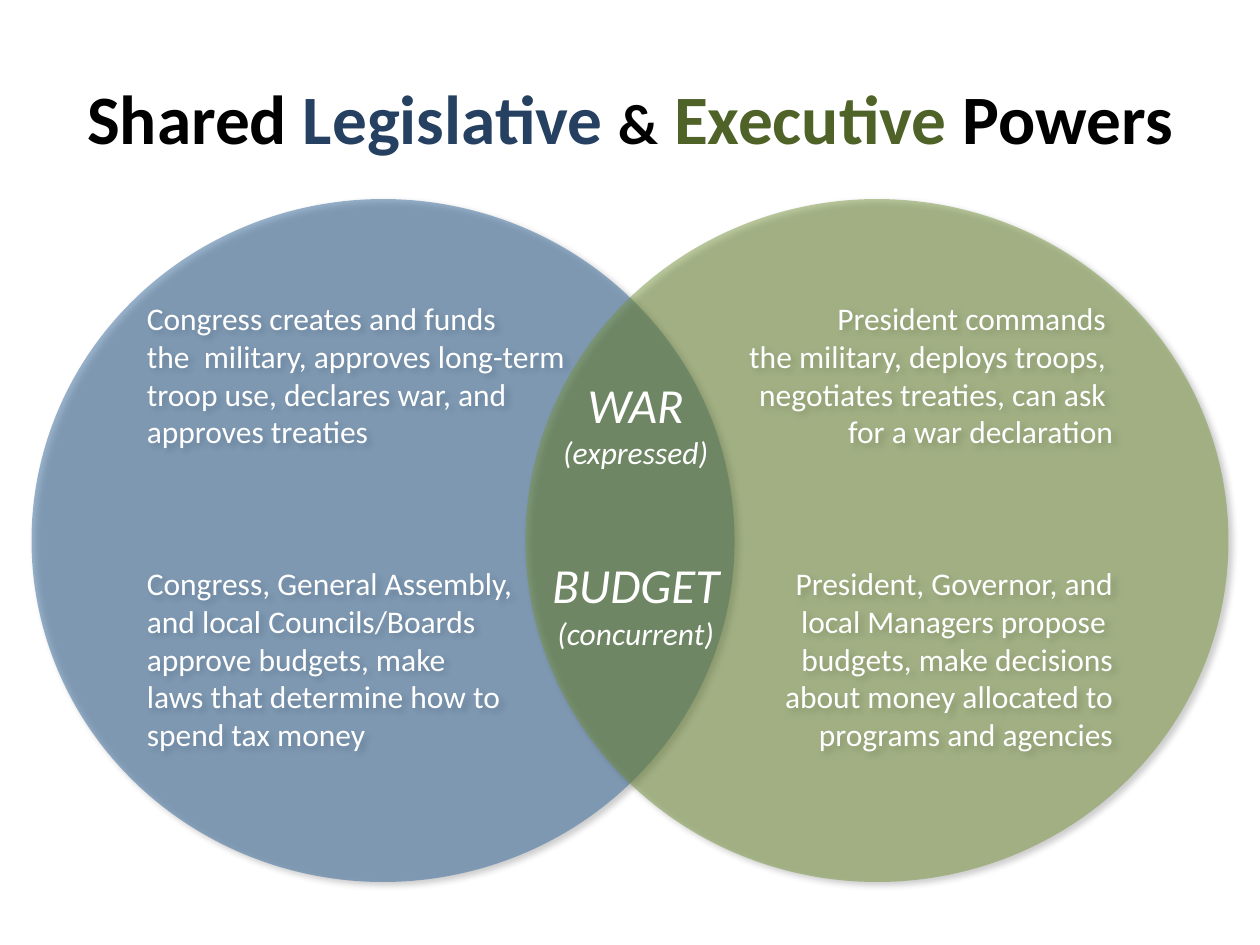
import pptx
import pptx.dml.color
import pptx.enum.shapes
import pptx.enum.text
import pptx.oxml
import pptx.oxml.ns
import pptx.util

Inches, Pt = pptx.util.Inches, pptx.util.Pt
RGBColor = pptx.dml.color.RGBColor
PP_ALIGN = pptx.enum.text.PP_ALIGN
ANCHOR = pptx.enum.text.MSO_ANCHOR
qn = pptx.oxml.ns.qn

BLACK = RGBColor(0x00, 0x00, 0x00)
WHITE = RGBColor(0xFF, 0xFF, 0xFF)
NAVY = RGBColor(0x25, 0x40, 0x61)
OLIVE = RGBColor(0x4F, 0x62, 0x28)
BLUE = RGBColor(0x33, 0x66, 0x99)
GREEN = RGBColor(0x77, 0x93, 0x3C)
FONT = "Calibri"

# Content
TITLE = [
    ("Shared ", 39.6, BLACK),
    ("Legislative ", 39.6, NAVY),
    ("&", 32.4, BLACK),
    (" ", 39.6, BLACK),
    ("Executive", 39.6, OLIVE),
    (" Powers", 39.6, BLACK),
]
LEGISLATIVE = [
    "Congress creates and funds \nthe  military, approves long-term "
    "troop use, declares war, and\napproves treaties",
    "Congress, General Assembly, \nand local Councils/Boards \n"
    "approve budgets, make\nlaws that determine how to\nspend tax money",
]
EXECUTIVE = [
    "President commands \nthe military, deploys troops, \n"
    "negotiates treaties, can ask \nfor a war declaration",
    "President, Governor, and\nlocal Managers propose \n"
    "budgets, make decisions\nabout money allocated to\nprograms and agencies",
]
SHARED = [("WAR", "(expressed)"), ("BUDGET", "(concurrent)")]

# Layout: two mirrored circles with equal side margins
SLIDE_W, SLIDE_H = 10, 7.5
MARGIN = 0.25
CIRCLE_W, CIRCLE_H, CIRCLE_TOP = 5.58, 5.42, 1.58
RIGHT_LEFT = SLIDE_W - MARGIN - CIRCLE_W
CIRCLES = [
    (MARGIN, BLUE, PP_ALIGN.LEFT, LEGISLATIVE),
    (RIGHT_LEFT, GREEN, PP_ALIGN.RIGHT, EXECUTIVE),
]
CIRCLE_GAP, SHARED_GAP = 65, 48  # points between the two topics


def shadow_effect(blur, distance, alpha):
    return pptx.oxml.parse_xml(
        f'<a:effectLst {pptx.oxml.ns.nsdecls("a")}>'
        f'<a:outerShdw blurRad="{Pt(blur)}" dist="{Pt(distance)}" dir="2700000" '
        f'algn="tl" rotWithShape="0"><a:srgbClr val="000000">'
        f'<a:alpha val="{alpha * 1000}"/></a:srgbClr></a:outerShdw></a:effectLst>')


def format_font(font, size, color, **styles):
    font.color.rgb = color
    for name, value in {"name": FONT, "size": Pt(size), **styles}.items():
        setattr(font, name, value)


def write_paragraph(frame, index, text, size, align, gap=0, **styles):
    paragraph = frame.paragraphs[0] if index == 0 else frame.add_paragraph()
    paragraph.text = text
    paragraph.alignment = align
    paragraph.space_before = Pt(gap)
    for run in paragraph.runs:
        format_font(run.font, size, WHITE, **styles)
        fill = run._r.rPr.find(qn("a:solidFill"))
        fill.addnext(shadow_effect(4, 3, 40))


def add_title(slide):
    title = slide.shapes.title
    place = {"left": 0.5, "top": 0.3, "width": SLIDE_W - 1, "height": 1.25}
    for side, length in place.items():
        setattr(title, side, Inches(length))
    frame = title.text_frame
    frame.auto_size = pptx.enum.text.MSO_AUTO_SIZE.NONE
    frame.vertical_anchor = ANCHOR.MIDDLE
    paragraph = frame.paragraphs[0]
    paragraph.alignment = PP_ALIGN.CENTER
    for text, size, color in TITLE:
        run = paragraph.add_run()
        run.text = text
        format_font(run.font, size, color, bold=True)


def add_circle(slide, left, color, align, topics):
    circle = slide.shapes.add_shape(
        pptx.enum.shapes.MSO_SHAPE.OVAL, Inches(left), Inches(CIRCLE_TOP),
        Inches(CIRCLE_W), Inches(CIRCLE_H))
    circle.fill.solid()
    circle.fill.fore_color.rgb = color
    circle.line.fill.background()
    properties = circle._element.spPr
    tint = properties.find(qn("a:solidFill")).find(qn("a:srgbClr"))
    pptx.oxml.ns  # namespace helpers serve the alpha element below
    tint.append(pptx.oxml.parse_xml(
        f'<a:alpha {pptx.oxml.ns.nsdecls("a")} val="50000"/>'))
    properties.append(shadow_effect(4, 3, 40))
    frame = circle.text_frame
    frame.word_wrap = True
    frame.vertical_anchor = ANCHOR.TOP
    frame.margin_top = 0
    for index, text in enumerate(topics):
        write_paragraph(frame, index, text, 18, align, CIRCLE_GAP * index)


def add_shared_powers(slide):
    box = slide.shapes.add_textbox(
        Inches(RIGHT_LEFT), Inches(2.92), Inches(1.75), Inches(3.3))
    frame = box.text_frame
    frame.word_wrap = True
    for index, (power, kind) in enumerate(SHARED):
        write_paragraph(frame, 2 * index, power, 28, PP_ALIGN.CENTER,
                        SHARED_GAP * index, italic=True)
        write_paragraph(frame, 2 * index + 1, kind, 18, PP_ALIGN.CENTER, italic=True)


def main():
    deck = pptx.Presentation()
    deck.slide_width, deck.slide_height = Inches(SLIDE_W), Inches(SLIDE_H)
    slide = deck.slides.add_slide(deck.slide_layouts.get_by_name("Title Only"))
    add_title(slide)
    for circle in CIRCLES:
        add_circle(slide, *circle)
    add_shared_powers(slide)
    deck.save("out.pptx")


if __name__ == "__main__":
    main()
